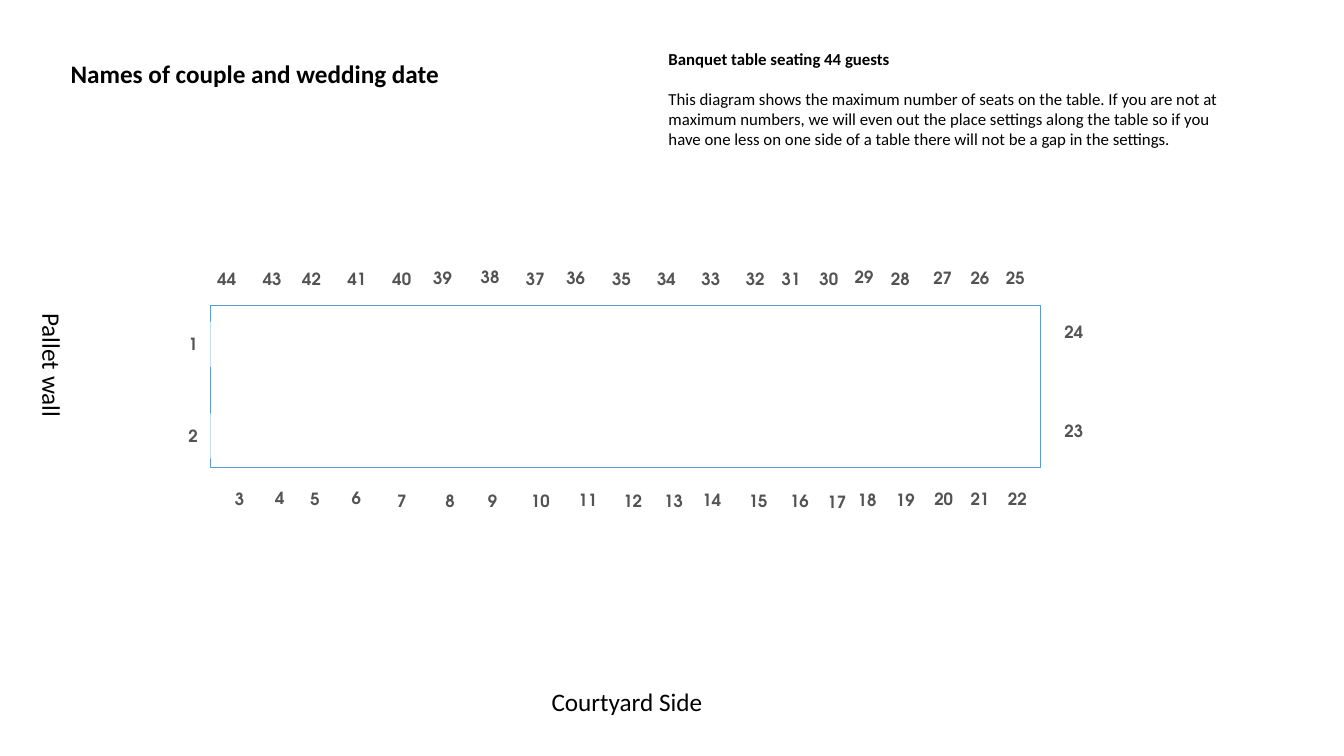
from pptx import Presentation
from pptx.dml.color import RGBColor
from pptx.enum.shapes import MSO_SHAPE as Shape
from pptx.enum.text import MSO_ANCHOR as Anchor, MSO_AUTO_SIZE as AutoSize, PP_ALIGN as Align
from pptx.util import Inches, Pt

BLACK, WHITE, SEAT_GREY, TABLE_BLUE = "000000", "FFFFFF", "535353", "5B9BD5"
LABEL_FONT, SEAT_FONT = "Calibri", "TeX Gyre Adventor"

# Place card kinds: width, height, filled
CARDS = {
    "digit": (0.35, 0.45, True),
    "open digit": (0.35, 0.45, False),
    "low": (0.48, 0.36, True),
    "wide": (0.51, 0.36, True),
    "tall": (0.48, 0.49, True),
    "narrow": (0.44, 0.47, True),
    "open": (0.5, 0.5, False),
}

# Seats in numeric order on each side of the table: card kind, left, top
PALLET_WALL_SEATS = [("digit", 1.74, 3.19), ("digit", 1.74, 4.1)]
COURTYARD_SEATS = [
    ("digit", 2.2, 4.72), ("digit", 2.6, 4.71), ("open digit", 2.95, 4.72),
    ("digit", 3.36, 4.71), ("digit", 3.81, 4.74), ("digit", 4.29, 4.74),
    ("digit", 4.71, 4.74), ("open", 5.11, 4.72), ("low", 5.59, 4.78),
    ("wide", 6.02, 4.79), ("tall", 6.44, 4.72), ("low", 6.82, 4.78),
    ("open", 7.27, 4.72), ("open", 7.68, 4.72), ("open", 8.05, 4.73),
    ("open", 8.35, 4.71), ("open", 8.73, 4.71), ("open", 9.11, 4.7),
    ("open", 9.47, 4.7), ("open", 9.84, 4.7),
]
FAR_END_SEATS = [("tall", 10.41, 4.03), ("low", 10.41, 3.11)]
BACK_SEATS = [
    ("open", 9.82, 2.51), ("open", 9.47, 2.51), ("open", 9.1, 2.51),
    ("low", 8.69, 2.59), ("low", 8.33, 2.57), ("low", 7.98, 2.59),
    ("wide", 7.59, 2.59), ("open", 7.24, 2.52), ("low", 6.81, 2.59),
    ("tall", 6.37, 2.52), ("wide", 5.91, 2.59), ("low", 5.47, 2.58),
    ("open", 5.06, 2.52), ("low", 4.62, 2.57), ("narrow", 4.17, 2.52),
    ("wide", 3.73, 2.59), ("low", 3.3, 2.59), ("open", 2.84, 2.52),
    ("low", 2.46, 2.59), ("open", 2, 2.52),
]

NOTE = (
    "This diagram shows the maximum number of seats on the table. "
    "If you are not at maximum numbers, we will even out the place settings "
    "along the table so if you have one less on one side of a table "
    "there will not be a gap in the settings."
)


def colour(value):
    return RGBColor.from_string(value)


def style(paragraph, size, font=LABEL_FONT, ink=BLACK, bold=False):
    for run in paragraph.runs:
        run.font.size = Pt(size)
        run.font.name = font
        run.font.color.rgb = colour(ink)
        run.font.bold = bold


def add_label(slide, box, lines, size):
    """Add a text box; lines holds (text, bold) pairs, set a blank line apart."""
    label = slide.shapes.add_textbox(*map(Inches, box))
    frame = label.text_frame
    frame.word_wrap = True
    frame.auto_size = AutoSize.SHAPE_TO_FIT_TEXT
    frame.margin_left = frame.margin_right = Inches(0.05)
    frame.margin_top = frame.margin_bottom = Inches(0.05)
    frame.text = "\n".join(text for text, _ in lines)
    for index, (paragraph, (_, bold)) in enumerate(zip(frame.paragraphs, lines)):
        style(paragraph, size, bold=bold)
        if index:
            paragraph.space_before = Pt(size * 1.2)
    return label


def add_banquet_table(slide):
    table = slide.shapes.add_shape(
        Shape.RECTANGLE, Inches(2.09), Inches(3.03), Inches(8.23), Inches(1.61))
    table.shadow.inherit = False
    table.fill.background()
    table.line.color.rgb = colour(TABLE_BLUE)
    table.line.width = Pt(1)


def add_seat(slide, number, kind, left, top):
    width, height, filled = CARDS[kind]
    box = [Inches(length) for length in (left, top, width, height)]
    if filled:
        seat = slide.shapes.add_shape(Shape.RECTANGLE, *box)
        seat.shadow.inherit = False
        seat.fill.solid()
        seat.fill.fore_color.rgb = colour(WHITE)
        seat.line.fill.background()
    else:
        seat = slide.shapes.add_textbox(*box)
    frame = seat.text_frame
    frame.word_wrap = True
    frame.vertical_anchor = Anchor.MIDDLE
    frame.text = str(number)
    frame.paragraphs[0].alignment = Align.CENTER
    style(frame.paragraphs[0], 12, SEAT_FONT, SEAT_GREY, bold=True)


def main():
    deck = Presentation()
    deck.slide_width, deck.slide_height = Inches(13.33), Inches(7.5)
    slide = deck.slides.add_slide(deck.slide_layouts[6])

    # Heading and explanation
    add_label(slide, (0.65, 0.53, 5.75, 0.4),
              [("Names of couple and wedding date", True)], 18)
    add_label(slide, (6.58, 0.43, 5.65, 1.11),
              [("Banquet table seating 44 guests", True), (NOTE, False)], 12)

    # Table with its seats, numbered around it
    add_banquet_table(slide)
    seats = PALLET_WALL_SEATS + COURTYARD_SEATS + FAR_END_SEATS + BACK_SEATS
    for number, (kind, left, top) in enumerate(seats, start=1):
        add_seat(slide, number, kind, left, top)

    # Sides of the room
    add_label(slide, (5.42, 6.76, 1.98, 0.4), [("Courtyard Side", False)], 18)
    pallet_wall = add_label(slide, (-0.47, 3.85, 1.98, 0.4), [("Pallet wall", False)], 18)
    pallet_wall.rotation = 90

    deck.save("out.pptx")


if __name__ == "__main__":
    main()
